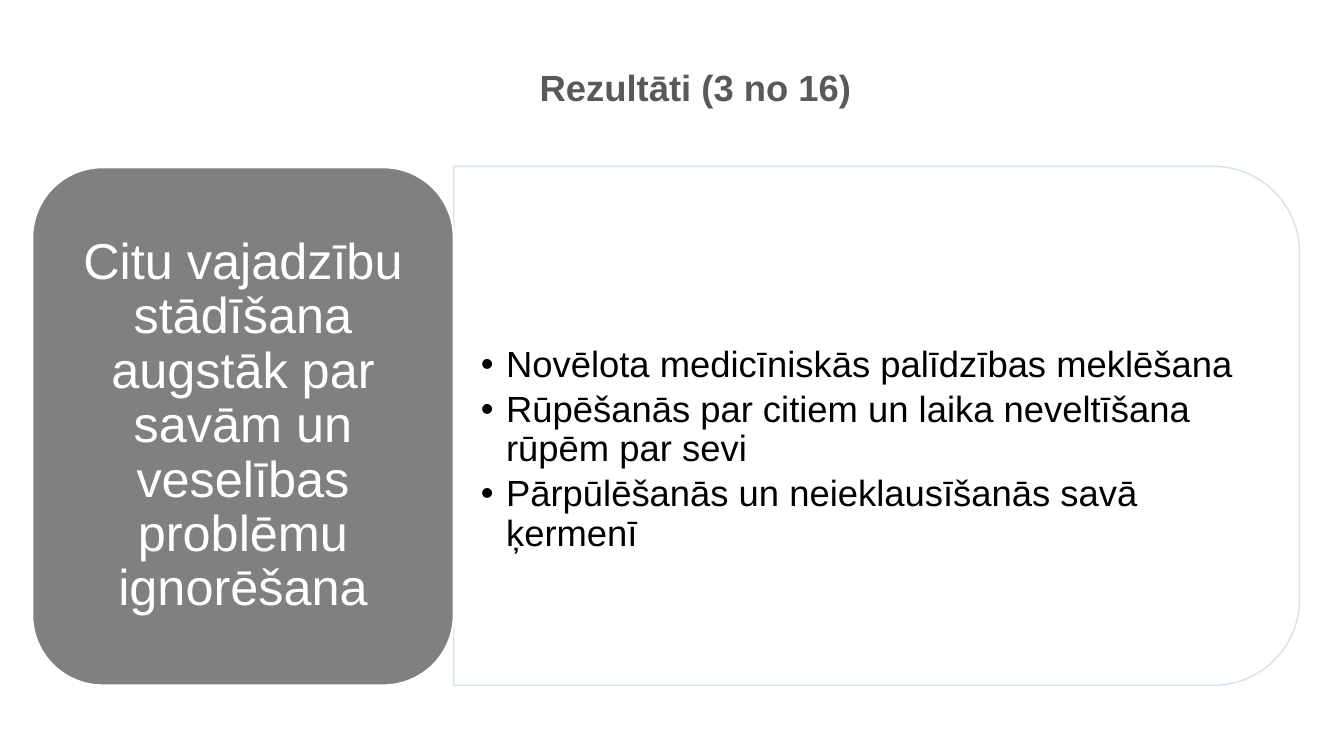
from lxml import etree
from pptx import Presentation
from pptx.dml.color import RGBColor
from pptx.enum.shapes import MSO_SHAPE
from pptx.enum.text import MSO_ANCHOR, MSO_AUTO_SIZE, PP_ALIGN
from pptx.oxml.ns import qn
from pptx.util import Emu, Pt

PX = 9144  # 100 px to the inch
ROUNDED, ROUNDED_TOP = MSO_SHAPE.ROUNDED_RECTANGLE, MSO_SHAPE.ROUND_2_SAME_RECTANGLE
TOP, MIDDLE = MSO_ANCHOR.TOP, MSO_ANCHOR.MIDDLE
LEFT, CENTER = PP_ALIGN.LEFT, PP_ALIGN.CENTER

TITLE = "Rezultāti (3 no 16)"
THEME = "Citu vajadzību stādīšana augstāk par savām un veselības problēmu ignorēšana"
FINDINGS = [
    "Novēlota medicīniskās palīdzības meklēšana",
    "Rūpēšanās par citiem un laika neveltīšana rūpēm par sevi",
    "Pārpūlēšanās un neieklausīšanās savā ķermenī",
]


def px(length):
    return Emu(length * PX)


def color(hex_code):
    return RGBColor.from_string(hex_code)


def set_alpha(fill, percent):
    """Make a solid fill, of a shape or of its line, partly transparent."""
    value = fill._xPr.find(qn("a:solidFill"))[0]
    etree.SubElement(value, qn("a:alpha"), val=str(percent * 1000))


def add_bullet(para, indent):
    properties = para._p.get_or_add_pPr()
    properties.set("marL", str(px(indent)))
    properties.set("indent", str(-px(indent)))
    etree.SubElement(properties, qn("a:buFont"), typeface="Arial")
    etree.SubElement(properties, qn("a:buChar"), char="•")


def write(box, lines, *, size, ink, bold=False, align=LEFT, anchor=MIDDLE,
          insets=(0, 0, 0, 0), after=0, bullet_indent=0):
    frame = box.text_frame
    frame.word_wrap = True
    frame.auto_size = MSO_AUTO_SIZE.NONE
    frame.vertical_anchor = anchor
    frame.margin_left, frame.margin_top, frame.margin_right, frame.margin_bottom = map(px, insets)
    for index, line in enumerate(lines):
        para = frame.add_paragraph() if index else frame.paragraphs[0]
        if bullet_indent:
            add_bullet(para, bullet_indent)
        para.alignment = align
        para.line_spacing = 0.9
        para.space_before = Pt(0)
        para.space_after = Pt(after)
        span = para.add_run()
        span.text = line
        span.font.name = "Arial"
        span.font.size = Pt(size)
        span.font.bold = bold
        span.font.color.rgb = color(ink)


def add_panel(page, kind, place, *, fill, line, width, rotation=0, alpha=100):
    panel = page.shapes.add_shape(kind, *map(px, place))
    panel.shadow.inherit = False
    panel.rotation = rotation
    panel.fill.solid()
    panel.fill.fore_color.rgb = color(fill)
    panel.line.color.rgb = color(line)
    panel.line.width = Pt(width)
    if alpha < 100:
        set_alpha(panel.fill, alpha)
        set_alpha(panel.line.fill, alpha)
    return panel


def main():
    deck = Presentation()
    deck.slide_width, deck.slide_height = px(1333), px(750)
    page = deck.slides.add_slide(deck.slide_layouts[5])

    # Title
    title = page.shapes.title
    title.left, title.top, title.width, title.height = map(px, (115, 70, 1150, 113))
    write(title, [TITLE], size=26, ink="58595B", bold=True, align=CENTER, anchor=TOP)

    # Findings: a panel turned so that its rounded corners face right
    add_panel(page, ROUNDED_TOP, (612, 3, 515, 839), rotation=90,
              fill="FFFFFF", line="D2DEEF", width=1, alpha=90)
    findings = page.shapes.add_textbox(*map(px, (450, 191, 814, 465)))
    write(findings, FINDINGS, size=26, ink="000000", insets=(27, 60, 27, 14),
          after=4, bullet_indent=25)

    # Theme
    theme = add_panel(page, ROUNDED, (32, 166, 418, 514),
                      fill="808080", line="FFFFFF", width=1.5)
    write(theme, [THEME], size=36, ink="FFFFFF", align=CENTER, insets=(15, 7, 15, 7))

    deck.save("out.pptx")


if __name__ == "__main__":
    main()
